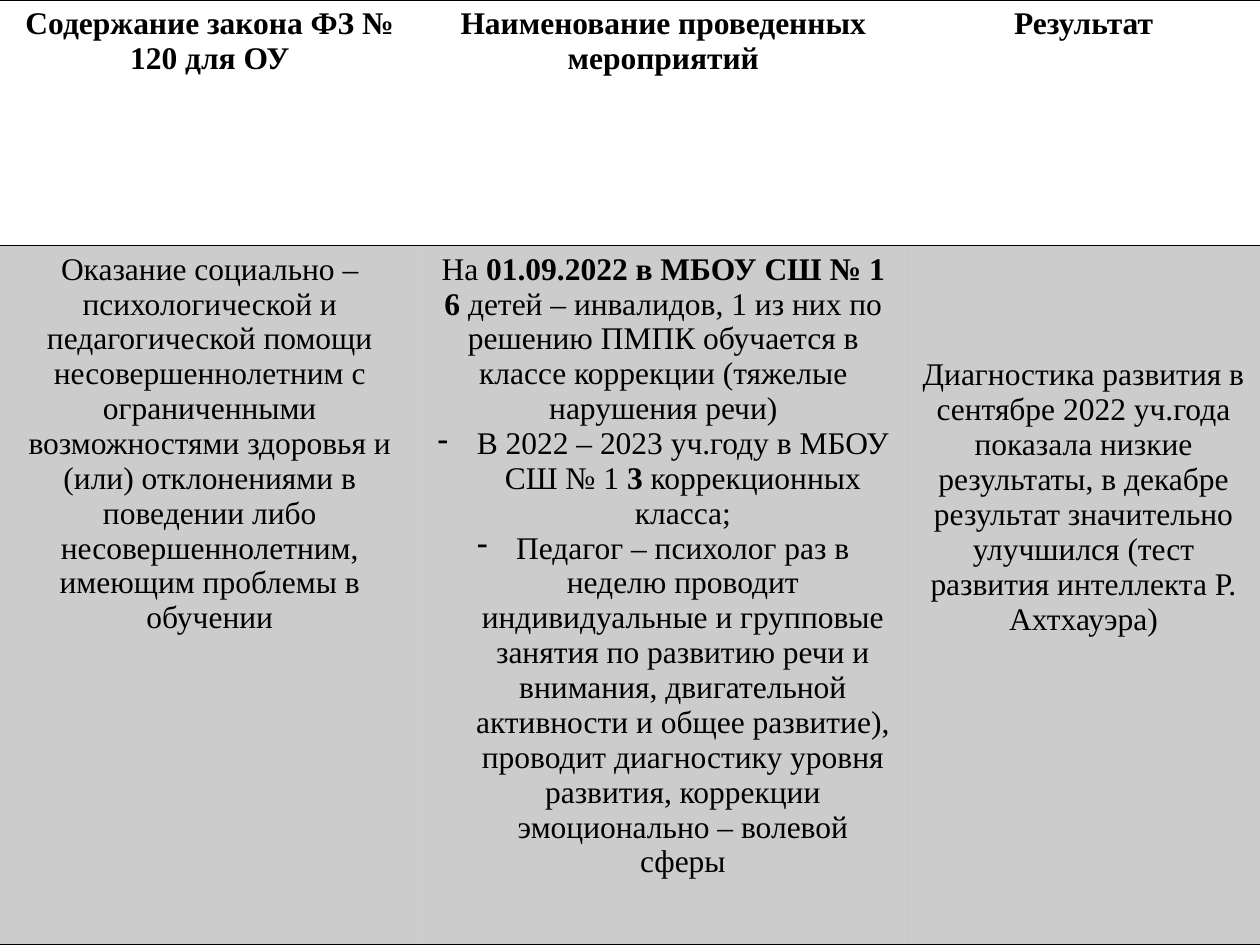
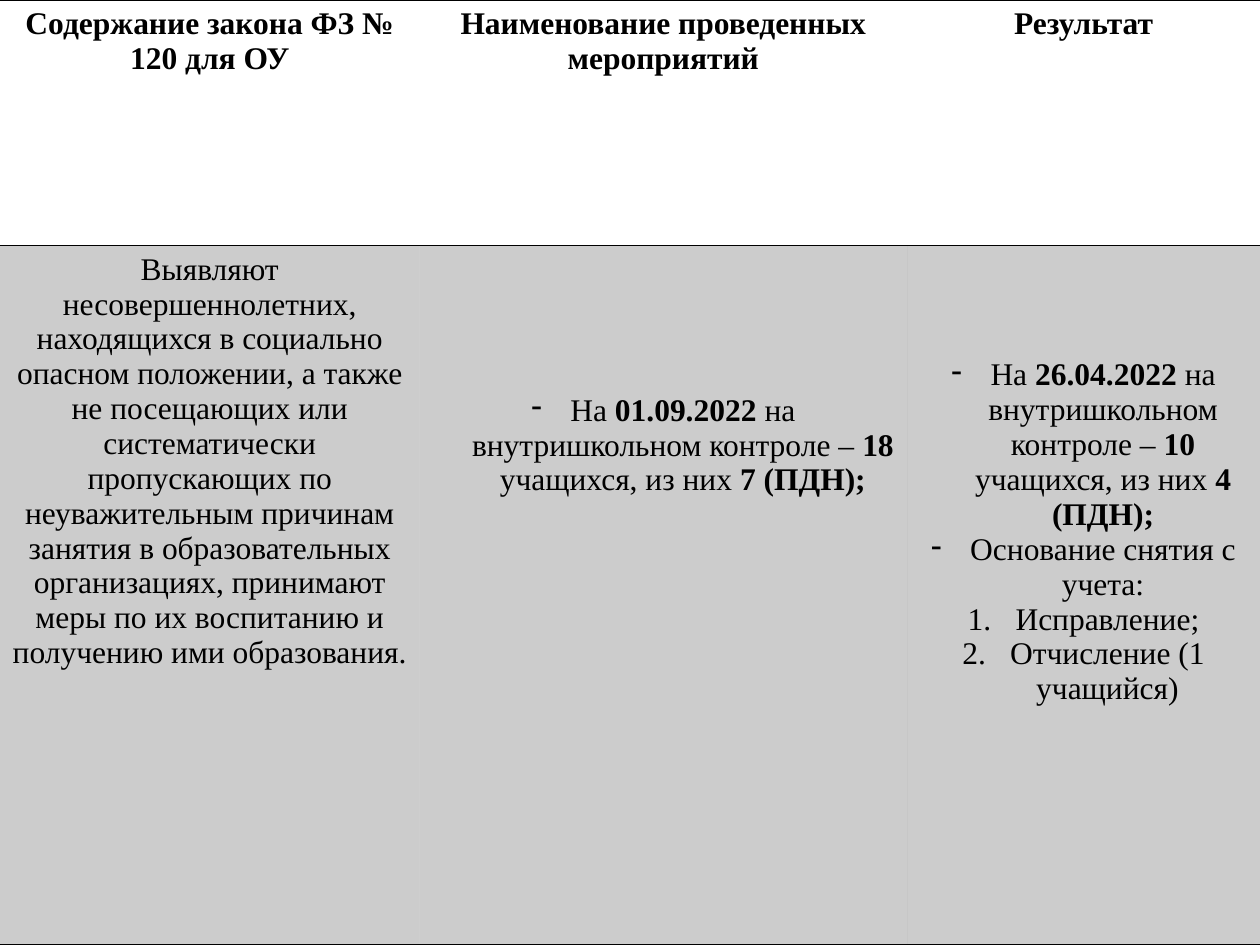
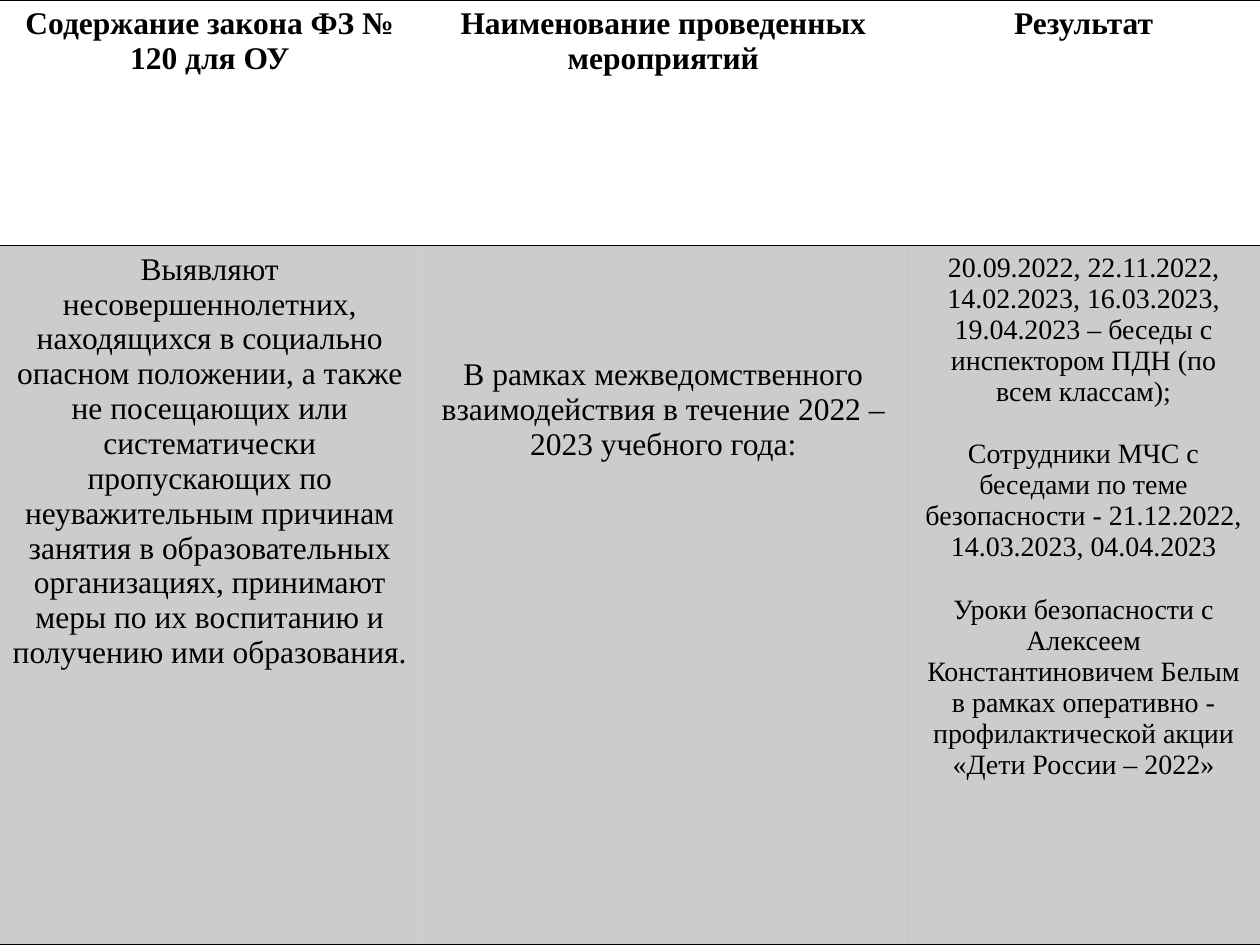
from dataclasses import dataclass

from lxml.etree import SubElement
from pptx import Presentation
from pptx.dml.color import RGBColor as Rgb
from pptx.enum.text import PP_ALIGN as Align
from pptx.oxml import parse_xml
from pptx.oxml.ns import nsdecls, qn
from pptx.util import Inches, Pt

COLORS = {"ink": "000000", "page": "FFFFFF"}
FONT = "Times New Roman"
PLAIN_TABLE = "{2D5ABB26-0587-4C30-8999-92F81FD0307C}"
COLUMN_SHARES = (0.333, 0.387, 0.28)
ROW_SHARES = (0.26, 0.74)
LINE_HEIGHT = 0.28
CELL_PADDING = 0.05
BODY_OPACITY = 20

HEADINGS = (
    "Содержание закона ФЗ № 120 для ОУ",
    "Наименование проведенных мероприятий",
    "Результат",
)


@dataclass
class Item:
    text: str
    mark: str = ""
    gap: float = 0


@dataclass
class Entry:
    items: list
    size: int = 18
    skipped_lines: int = 0


class LawDeck:
    def __init__(self, width, height):
        self.deck = Presentation()
        self.deck.slide_width = self.width = Inches(width)
        self.deck.slide_height = self.height = Inches(height)
        self.slide = None

    def add_slide(self):
        self.slide = self.deck.slides.add_slide(self.deck.slide_layouts[6])
        backdrop = self.slide.background.fill
        backdrop.solid()
        backdrop.fore_color.rgb = Rgb.from_string(COLORS["page"])

    def report(self, entries):
        table = self.slide.shapes.add_table(
            len(ROW_SHARES), len(COLUMN_SHARES), 0, 0, self.width, self.height
        ).table
        table.first_row = table.horz_banding = False
        table._tbl.tblPr.find(qn("a:tableStyleId")).text = PLAIN_TABLE
        for column, share in zip(table.columns, COLUMN_SHARES):
            column.width = int(self.width * share)
        for row, share in zip(table.rows, ROW_SHARES):
            row.height = int(self.height * share)
        for index, (heading, entry) in enumerate(zip(HEADINGS, entries)):
            self.heading(table.cell(0, index), heading)
            self.entry(table.cell(1, index), entry)

    def heading(self, cell, text):
        cell.fill.background()
        self.rules(cell, "lnT", "lnB")
        self.fill_text(cell, Entry([Item(f"*{text}*")]))

    def entry(self, cell, entry):
        cell.fill.solid()
        cell.fill.fore_color.rgb = Rgb.from_string(COLORS["ink"])
        tint = cell._tc.tcPr.find(".//" + qn("a:srgbClr"))
        SubElement(tint, qn("a:alpha"), val=str(BODY_OPACITY * 1000))
        self.rules(cell, "lnT", "lnB")
        self.fill_text(cell, entry)

    def rules(self, cell, *sides):
        for position, side in enumerate(sides):
            cell._tc.tcPr.insert(position, parse_xml(
                f'<a:{side} {nsdecls("a")} w="{Pt(1)}"><a:solidFill>'
                f'<a:srgbClr val="{COLORS["ink"]}"/></a:solidFill></a:{side}>'
            ))

    def fill_text(self, cell, entry):
        cell.margin_top = Inches(CELL_PADDING + entry.skipped_lines * LINE_HEIGHT)
        frame = cell.text_frame
        for index, item in enumerate(entry.items):
            paragraph = frame.add_paragraph() if index else frame.paragraphs[0]
            paragraph.alignment = Align.CENTER
            if item.mark:
                self.bullet(paragraph, item.mark)
            if item.gap:
                paragraph.space_before = Pt(item.gap)
            for part, words in enumerate(item.text.split("*")):
                if words:
                    self.run(paragraph, words, entry.size, part % 2 == 1)

    def run(self, paragraph, words, size, bold):
        run = paragraph.add_run()
        run.text = words
        run.font.name = FONT
        run.font.size = Pt(size)
        run.font.bold = bold
        run.font.color.rgb = Rgb.from_string(COLORS["ink"])

    def bullet(self, paragraph, mark):
        numbered = mark == "1."
        indent = Inches(0.38 if numbered else 0.31)
        properties = paragraph._p.get_or_add_pPr()
        properties.set("marL", str(indent))
        properties.set("indent", str(-indent))
        if numbered:
            SubElement(properties, qn("a:buAutoNum"), type="arabicPeriod")
        else:
            SubElement(properties, qn("a:buChar"), char=mark)


SUPPORT_DUTY = Entry([Item(
    "Оказание социально – психологической и педагогической помощи "
    "несовершеннолетним с ограниченными возможностями здоровья и (или) "
    "отклонениями в поведении либо несовершеннолетним, имеющим проблемы в обучении"
)])
PREVENTION_DUTY = Entry([Item(
    "Выявляют несовершеннолетних, находящихся в социально опасном положении, "
    "а также не посещающих или систематически пропускающих по неуважительным "
    "причинам занятия в образовательных организациях, принимают меры по их "
    "воспитанию и получению ими образования."
)])

REPORTS = (
    (
        SUPPORT_DUTY,
        Entry([
            Item("На *01.09.2022 в МБОУ СШ № 1*"),
            Item("*6* детей – инвалидов, 1 из них по решению ПМПК обучается "
                 "в классе коррекции (тяжелые нарушения речи)"),
            Item("В 2022 – 2023 уч.году в МБОУ СШ № 1 *3* коррекционных класса;", "-"),
            Item("Педагог – психолог раз в неделю проводит индивидуальные и "
                 "групповые занятия по развитию речи и внимания, двигательной "
                 "активности и общее развитие), проводит диагностику уровня "
                 "развития, коррекции эмоционально – волевой сферы", "-"),
        ]),
        Entry([Item(
            "Диагностика развития в сентябре 2022 уч.года показала низкие "
            "результаты, в декабре результат значительно улучшился (тест "
            "развития интеллекта Р. Ахтхауэра)"
        )], skipped_lines=3),
    ),
    (
        PREVENTION_DUTY,
        Entry([Item(
            "На *01.09.2022* на внутришкольном контроле – *18* учащихся, "
            "из них *7 (ПДН);*", "-"
        )], skipped_lines=4),
        Entry([
            Item("На *26.04.2022* на внутришкольном контроле – *10* учащихся, "
                 "из них *4 (ПДН);*", "-"),
            Item("Основание снятия с учета:", "-"),
            Item("Исправление;", "1."),
            Item("Отчисление (1 учащийся)", "1."),
        ], skipped_lines=3),
    ),
    (
        PREVENTION_DUTY,
        Entry([Item(
            "В рамках межведомственного взаимодействия в течение "
            "2022 – 2023 учебного года:"
        )], skipped_lines=3),
        Entry([
            Item("20.09.2022, 22.11.2022, 14.02.2023, 16.03.2023, 19.04.2023 – "
                 "беседы с инспектором ПДН (по всем классам);"),
            Item("Сотрудники МЧС с беседами по теме безопасности - "
                 "21.12.2022, 14.03.2023, 04.04.2023", gap=17.8),
            Item("Уроки безопасности с Алексеем Константиновичем Белым в рамках "
                 "оперативно - профилактической акции «Дети России – 2022»", gap=17.8),
        ], size=16),
    ),
)


def main():
    law = LawDeck(10, 7.5)
    for entries in REPORTS:
        law.add_slide()
        law.report(entries)
    law.deck.save("out.pptx")


if __name__ == "__main__":
    main()
